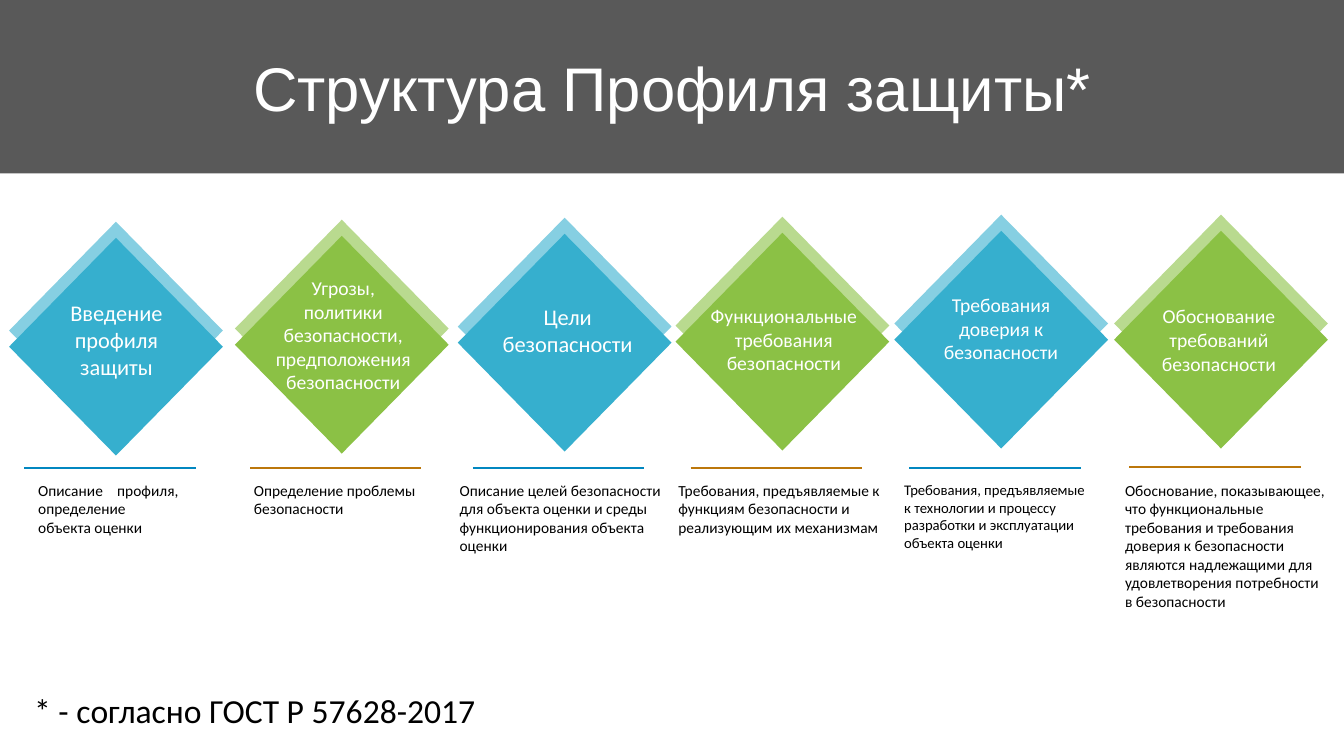
"""Build the slide on the structure of a protection profile."""
from dataclasses import dataclass

from lxml import etree
from pptx import Presentation
from pptx.dml.color import RGBColor
from pptx.enum import shapes, text
from pptx.oxml import ns
from pptx.util import Inches, Pt

WHITE, BLACK, GREY = "FFFFFF", "000000", "595959"
SIDE, TALL, SHIFT = 2.12, 2.16, 0.16
RULE, INSET = 1.7, 0.15
LEFT, MID, JUST = text.PP_ALIGN.LEFT, text.PP_ALIGN.CENTER, text.PP_ALIGN.JUSTIFY


@dataclass
class Tone:
    back: str
    front: str
    rule: str


@dataclass
class Box:
    words: str
    left: float
    top: float
    width: float
    height: float
    size: float
    align: text.PP_ALIGN = LEFT


@dataclass
class Part:
    left: float
    top: float
    label: Box
    note: Box
    rule: float = 4.64


BLUE = Tone("86CFE2", "36AFCE", "0187C0")
GREEN = Tone("B9DA8F", "8BC145", "BC770B")

PARTS = [
    Part(0.09, 2.2,
         Box("Введение профиля защиты", 0.58, 2.92, 1.15, 0.91, 16, MID),
         Box("Описание профиля, определение объекта оценки",
             0.28, 4.72, 1.59, 0.66, 11, JUST)),
    Part(2.33, 2.18,
         Box("Угрозы, политики безопасности, предположения безопасности",
             2.63, 2.69, 1.55, 1.28, 14, MID),
         Box("Определение проблемы безопасности", 2.42, 4.72, 1.84, 0.47, 11)),
    Part(4.54, 2.16,
         Box("Цели безопасности", 4.87, 2.96, 1.52, 0.64, 16, MID),
         Box("Описание целей безопасности для объекта оценки и среды "
             "функционирования объекта оценки", 4.46, 4.72, 2.21, 0.84, 11)),
    Part(6.7, 2.15,
         Box("Функциональные требования безопасности",
             6.83, 2.97, 1.89, 1.04, 14, MID),
         Box("Требования, предъявляемые к функциям безопасности и "
             "реализующим их механизмам", 6.63, 4.72, 2.2, 0.66, 11)),
    Part(8.87, 2.13,
         Box("Требования доверия к безопасности",
             9.05, 2.86, 1.76, 0.81, 14, MID),
         Box("Требования, предъявляемые к технологии и процессу разработки "
             "и эксплуатации объекта оценки", 8.87, 4.72, 2.03, 0.81, 10.5)),
    Part(11.05, 2.13,
         Box("Обоснование требований безопасности",
             11.28, 2.97, 1.62, 0.81, 14, MID),
         Box("Обоснование, показывающее, что функциональные требования и "
             "требования доверия к безопасности являются надлежащими для "
             "удовлетворения потребности в безопасности",
             11.06, 4.72, 2.21, 1.4, 11), 4.63),
]
SOURCE = Box("* - согласно ГОСТ Р 57628-2017", 0.24, 6.8, 4.69, 0.5, 24)


def tint(code: str) -> RGBColor:
    return RGBColor.from_string(code)


def style(frame, words: str, size: float, face: str, color: str,
          align: text.PP_ALIGN) -> None:
    frame.text = words
    para = frame.paragraphs[0]
    para.alignment = align
    para.font.size, para.font.name = Pt(size), face
    para.font.color.rgb = tint(color)


def draw_shape(slide, kind: shapes.MSO_SHAPE, left: float, top: float,
               width: float, height: float, color: str):
    shape = slide.shapes.add_shape(kind, Inches(left), Inches(top),
                                   Inches(width), Inches(height))
    shape.shadow.inherit = False
    shape.fill.solid()
    shape.fill.fore_color.rgb = tint(color)
    shape.line.fill.background()
    return shape


def draw_rule(slide, left: float, top: float, color: str) -> None:
    rule = slide.shapes.add_connector(
        shapes.MSO_CONNECTOR.STRAIGHT, Inches(left), Inches(top),
        Inches(left + RULE), Inches(top))
    rule.line.color.rgb = tint(color)
    rule.line.width = Pt(1.5)
    etree.SubElement(rule._element.spPr, ns.qn("a:effectLst"))


def draw_text(slide, box: Box, color: str, wrap: bool = True) -> None:
    frame = slide.shapes.add_textbox(
        Inches(box.left), Inches(box.top),
        Inches(box.width), Inches(box.height)).text_frame
    frame.word_wrap = wrap
    frame.auto_size = text.MSO_AUTO_SIZE.SHAPE_TO_FIT_TEXT
    style(frame, box.words, box.size, "Calibri", color, box.align)


def draw_head(slide) -> None:
    band = draw_shape(slide, shapes.MSO_SHAPE.RECTANGLE,
                      0, 0, 13.33, 1.72, GREY)
    title = slide.shapes.title
    title._element.addprevious(band._element)
    title.left, title.top = Inches(0.76), Inches(0.5)
    title.width, title.height = Inches(11.82), Inches(0.73)
    frame = title.text_frame
    frame.auto_size = text.MSO_AUTO_SIZE.NONE
    frame.vertical_anchor = text.MSO_ANCHOR.MIDDLE
    style(frame, "Структура Профиля защиты*", 44, "Arial", WHITE, MID)


def draw_part(slide, part: Part, tone: Tone) -> None:
    for drop, color in ((0, tone.back), (SHIFT, tone.front)):
        draw_shape(slide, shapes.MSO_SHAPE.DIAMOND, part.left,
                   part.top + drop, SIDE, TALL, color)
    draw_rule(slide, part.left + INSET, part.rule, tone.rule)
    draw_text(slide, part.label, WHITE)
    draw_text(slide, part.note, BLACK)


def main() -> None:
    deck = Presentation()
    deck.slide_width, deck.slide_height = Inches(13.33), Inches(7.5)
    slide = deck.slides.add_slide(deck.slide_layouts[5])
    draw_head(slide)
    for rank, part in enumerate(PARTS):
        draw_part(slide, part, GREEN if rank % 2 else BLUE)
    draw_text(slide, SOURCE, BLACK, wrap=False)
    deck.save("out.pptx")


if __name__ == "__main__":
    main()
